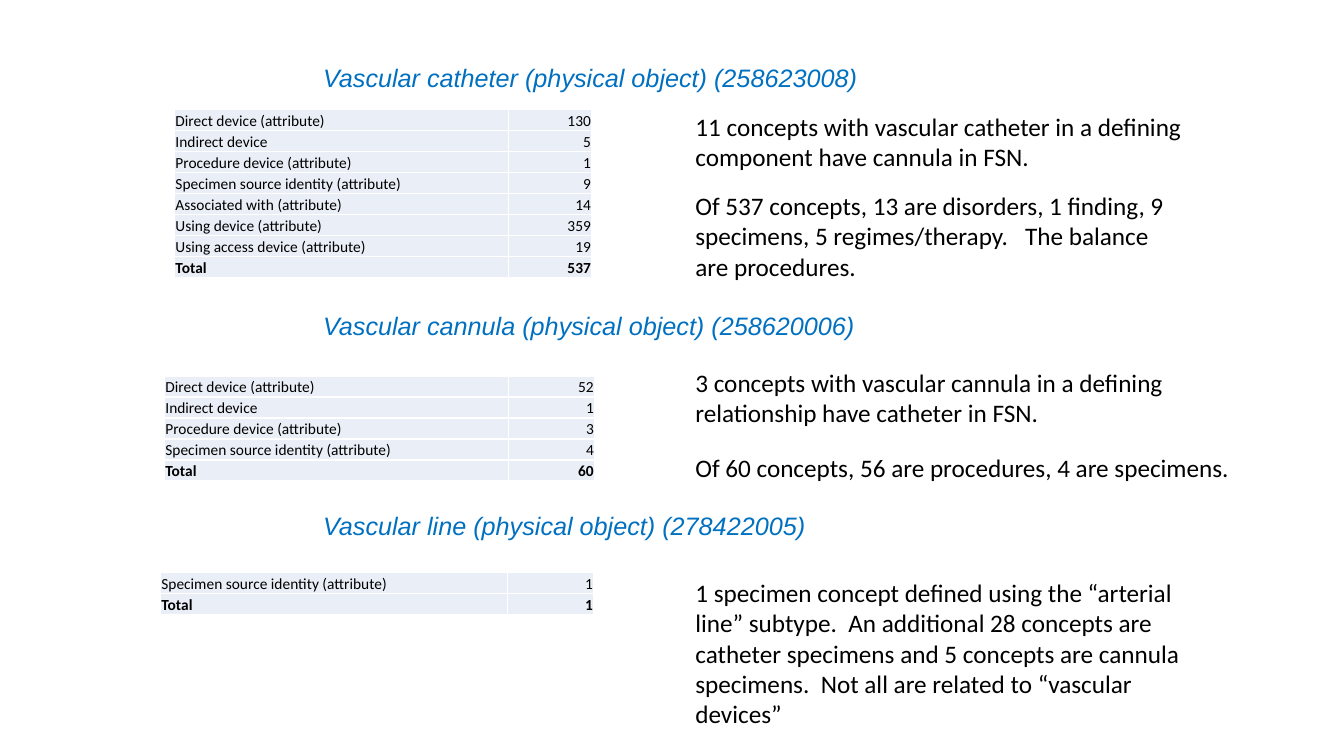
"""Build a slide comparing concept counts for three vascular device terms."""
from dataclasses import dataclass

from lxml import etree
from pptx import Presentation
from pptx import util as u
from pptx.dml.color import RGBColor
from pptx.enum import text
from pptx.oxml import ns


@dataclass(frozen=True)
class Theme:
    heading: str = "0070C0"
    ink: str = "000000"
    cell: str = "EAEFF7"
    border: str = "FFFFFF"
    heading_font: str = "Arial"
    body_font: str = "Calibri"
    large: int = 18
    small: int = 11


THEME = Theme()
WIDTH, HEIGHT = u.Inches(13.33), u.Inches(7.5)

SECTIONS = [
    {
        "heading": ("Vascular catheter (physical object) (258623008)", 7.33, 41.6),
        "table": (12.98, 14.53, 31.06),
        "rows": [
            ("Direct device (attribute)", 130),
            ("Indirect device", 5),
            ("Procedure device (attribute)", 1),
            ("Specimen source identity (attribute)", 9),
            ("Associated with (attribute)", 14),
            ("Using device (attribute)", 359),
            ("Using access device (attribute)", 19),
            ("Total", 537),
        ],
        "notes": [
            ("11 concepts with vascular catheter in a defining component have cannula in FSN.",
             14, 41.64, 2),
            ("Of 537 concepts, 13 are disorders, 1 finding, 9 specimens, "
             "5 regimes/therapy.   The balance are procedures.", 24.53, 36.76, 3),
        ],
    },
    {
        "heading": ("Vascular cannula (physical object) (258620006)", 40.13, 41.4),
        "table": (12.23, 49.73, 32.03),
        "rows": [
            ("Direct device (attribute)", 52),
            ("Indirect device", 1),
            ("Procedure device (attribute)", 3),
            ("Specimen source identity (attribute)", 4),
            ("Total", 60),
        ],
        "notes": [
            ("3 concepts with vascular cannula in a defining relationship have catheter in FSN.",
             47.87, 39.01, 2),
            ("Of 60 concepts, 56 are procedures, 4 are specimens.", 59.2, 41.71, 1),
        ],
    },
    {
        "heading": ("Vascular line (physical object) (278422005)", 66.53, 37.7),
        "table": (11.93, 75.73, 32.26),
        "rows": [("Specimen source identity (attribute)", 1), ("Total", 1)],
        "notes": [
            ("1 specimen concept defined using the “arterial line” subtype.  "
             "An additional 28 concepts are catheter specimens and 5 concepts are cannula "
             "specimens.  Not all are related to “vascular devices”", 75.73, 40.74, 5),
        ],
    },
]

HEADING_LEFT, HEADING_HEIGHT = 23.3, 5.73
NOTE_LEFT, NOTE_LINE, NOTE_PADDING = 51, 4, 1.4
ROW_HEIGHT, LABEL_SHARE = 2.78, 0.8


def across(percent):
    return round(WIDTH * percent / 100)


def down(percent):
    return round(HEIGHT * percent / 100)


def write(frame, content, *, font=THEME.body_font, size=THEME.large, color=THEME.ink,
          bold=False, italic=False, align=text.PP_ALIGN.LEFT, spacing=None):
    paragraph = frame.paragraphs[0]
    paragraph.alignment = align
    paragraph.line_spacing = spacing
    run = paragraph.add_run()
    run.text = content
    run.font.name, run.font.size = font, u.Pt(size)
    run.font.bold, run.font.italic = bold, italic
    run.font.color.rgb = RGBColor.from_string(color)


def add_text(slide, content, left, top, width, height, wrap, **style):
    box = slide.shapes.add_textbox(across(left), down(top), across(width), down(height))
    box.text_frame.word_wrap = wrap
    box.text_frame.auto_size = text.MSO_AUTO_SIZE.SHAPE_TO_FIT_TEXT
    write(box.text_frame, content, **style)


def outline(cell):
    properties = cell._tc.get_or_add_tcPr()
    for position, side in enumerate(("lnL", "lnR", "lnT", "lnB")):
        line = etree.Element(ns.qn(f"a:{side}"), w=str(u.Pt(1)))
        fill = etree.SubElement(line, ns.qn("a:solidFill"))
        etree.SubElement(fill, ns.qn("a:srgbClr"), val=THEME.border)
        properties.insert(position, line)


def add_counts(slide, rows, left, top, width):
    frame = slide.shapes.add_table(len(rows), 2, across(left), down(top),
                                   across(width), down(ROW_HEIGHT * len(rows)))
    table = frame.table
    table.first_row = table.horz_banding = False
    for column, share in zip(table.columns, (LABEL_SHARE, 1 - LABEL_SHARE)):
        column.width = across(width * share)
    for table_row, values in zip(table.rows, rows):
        table_row.height = down(ROW_HEIGHT)
        aligns = (text.PP_ALIGN.LEFT, text.PP_ALIGN.RIGHT)
        for cell, value, align in zip(table_row.cells, values, aligns):
            cell.margin_left = cell.margin_right = cell.margin_top = u.Inches(0.01)
            cell.margin_bottom = 0
            cell.vertical_anchor = text.MSO_ANCHOR.BOTTOM
            cell.fill.solid()
            cell.fill.fore_color.rgb = RGBColor.from_string(THEME.cell)
            outline(cell)
            write(cell.text_frame, str(value), size=THEME.small,
                  bold=values[0] == "Total", align=align)


def main():
    presentation = Presentation()
    presentation.slide_width, presentation.slide_height = WIDTH, HEIGHT
    slide = presentation.slides.add_slide(presentation.slide_layouts[6])
    for section in SECTIONS:
        heading, top, width = section["heading"]
        add_text(slide, heading, HEADING_LEFT, top, width, HEADING_HEIGHT, False,
                 font=THEME.heading_font, color=THEME.heading, italic=True, spacing=1.07)
        add_counts(slide, section["rows"], *section["table"])
        for note, top, width, lines in section["notes"]:
            add_text(slide, note, NOTE_LEFT, top, width,
                     NOTE_LINE * lines + NOTE_PADDING, lines > 1)
    presentation.save("out.pptx")


if __name__ == "__main__":
    main()
